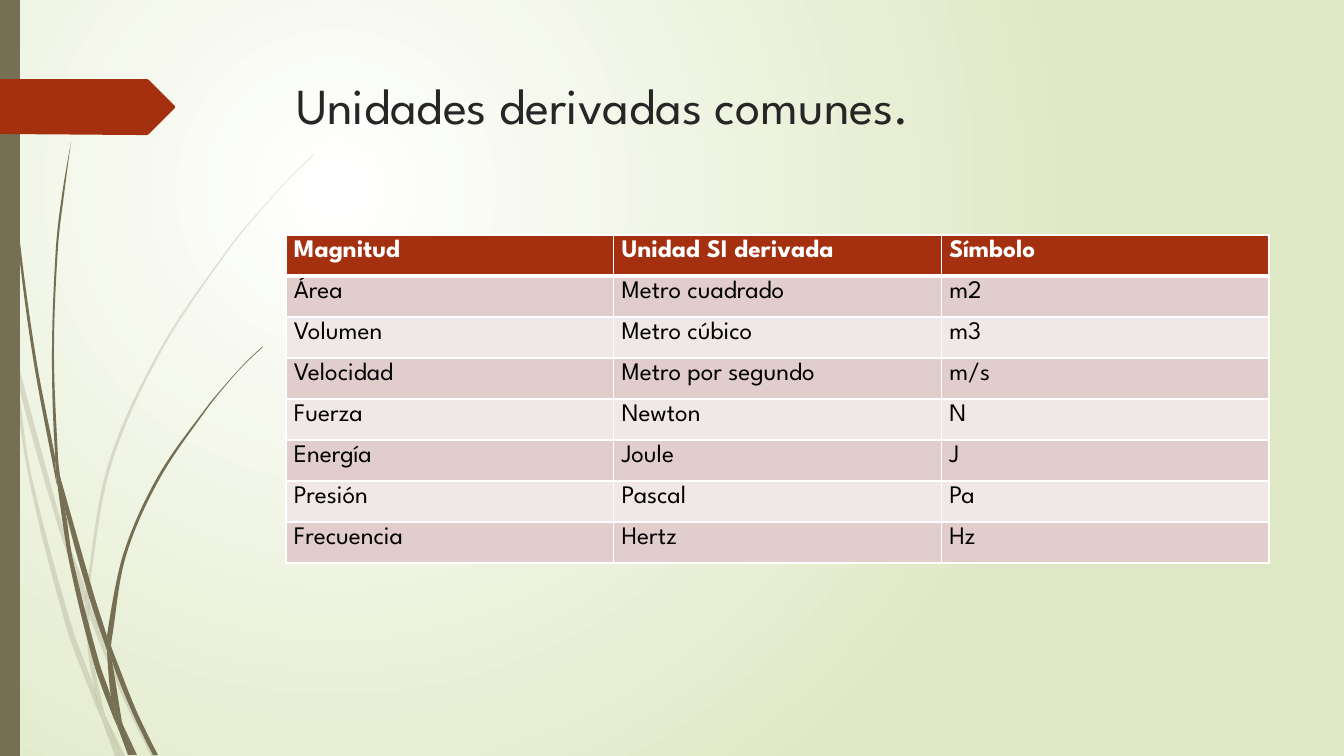
from lxml.etree import SubElement as Sub
from pptx import Presentation
from pptx.dml.color import RGBColor
from pptx.enum.shapes import MSO_SHAPE as Kind
from pptx.enum.text import MSO_ANCHOR as Anchor, MSO_AUTO_SIZE as Fit, PP_ALIGN as Align
from pptx.oxml.ns import qn
from pptx.util import Pt

SCALE = 914400 / 100.8
FONT = "League Spartan"
OLIVE, RUST, WHITE = "766F54", "A53010", "FFFFFF"

# Corner and knot points of the grass pieces
PALE = [
    [(11, 353), (9, 325), (0, 284), (0, 301), (10, 347)],
    [(58, 526), (85, 604), (86, 591), (62, 524), (14, 348), (17, 379)],
    [(93, 612), (89, 601), (89, 615), (124, 700), (151, 756), (156, 756), (128, 698)],
    [(120, 756), (125, 756), (106, 717)],
    [(94, 688), (71, 624), (31, 473), (17, 379), (11, 353), (28, 474), (66, 626),
     (93, 699), (102, 720), (100, 713)],
    [(85, 604), (88, 651), (94, 688), (97, 698), (106, 717), (104, 712), (92, 651),
     (89, 615), (89, 613)],
    [(89, 589), (111, 466), (161, 352), (231, 247), (270, 200), (292, 176), (314, 155),
     (314, 154), (291, 176), (270, 199), (230, 246), (159, 351), (108, 465), (86, 589),
     (86, 591), (89, 601)],
    [(102, 720), (115, 756), (120, 756)],
    [(89, 613), (89, 615), (89, 601), (86, 591), (85, 604)],
    [(97, 698), (94, 688), (100, 713), (102, 720), (120, 756), (106, 717)],
]
DARK = [
    [(7, 111), (17, 235), (33, 358), (56, 481), (57, 485), (55, 461), (55, 457), (36, 358),
     (19, 234), (8, 110), (5, 48), (4, 0), (3, 0), (4, 48)],
    [(89, 597), (107, 650), (107, 638), (107, 636), (94, 595), (60, 476), (65, 509)],
    [(114, 654), (111, 646), (112, 661), (133, 714), (153, 755), (158, 755), (137, 712)],
    [(111, 697), (99, 662), (73, 560), (65, 509), (57, 481), (69, 561), (94, 664),
     (112, 714), (118, 728), (117, 723)],
    [(60, 476), (58, 457), (54, 352), (58, 247), (64, 195), (71, 142), (62, 195),
     (56, 247), (52, 352), (55, 453)],
    [(134, 755), (137, 755), (123, 725)],
    [(57, 481), (65, 509), (60, 476), (55, 453), (55, 457)],
    [(112, 638), (126, 556), (159, 480), (207, 409), (233, 377), (247, 362), (263, 347),
     (262, 347), (247, 361), (233, 376), (206, 408), (157, 478), (123, 555), (107, 636),
     (111, 646)],
    [(118, 728), (128, 755), (132, 755)],
    [(107, 650), (111, 697), (117, 712), (123, 725), (122, 722), (112, 661), (110, 656)],
    [(107, 650), (110, 656), (112, 661), (111, 646), (107, 636), (107, 638)],
    [(117, 712), (111, 697), (117, 723), (118, 728), (131, 755), (134, 755), (123, 725)],
]
TAB = [(175, 108), (149, 134), (147, 135), (137, 135), (0, 134), (0, 79), (147, 79),
       (149, 80), (175, 106)]
ROWS = [
    ("Magnitud", "Unidad SI derivada", "Símbolo"),
    ("Área", "Metro cuadrado", "m2"),
    ("Volumen", "Metro cúbico", "m3"),
    ("Velocidad", "Metro por segundo", "m/s"),
    ("Fuerza", "Newton", "N"),
    ("Energía", "Joule", "J"),
    ("Presión", "Pascal", "Pa"),
    ("Frecuencia", "Hertz", "Hz"),
]


def px(n):
    return round(n * SCALE)


def rgb(code):
    return RGBColor.from_string(code)


def style(para, size, color, bold=False):
    for run in para.runs:
        font = run.font
        font.name, font.size, font.bold = FONT, Pt(size), bold
        font.color.rgb = rgb(color)


def paint(shape, color):
    shape.fill.solid()
    shape.fill.fore_color.rgb = rgb(color)
    shape.line.fill.background()
    shape.shadow.inherit = False


def slope(a, b, c):
    """Unit direction through b, or zero where b is a sharp corner."""
    u, v = b - a, c - b
    if (u * v.conjugate()).real < 0.9 * abs(u) * abs(v):
        return 0
    return (u + v) / abs(u + v)


def bend(shape):
    """Turn the straight sides of an outline into smooth curves."""
    sides = list(shape.element.iter(qn("a:lnTo")))
    ends = [complex(int(side[0].get("x")), int(side[0].get("y"))) for side in sides]
    size = len(ends)
    dirs = [slope(ends[i - 1], ends[i], ends[(i + 1) % size]) for i in range(size)]
    for i, side in enumerate(sides):
        reach = abs(ends[i] - ends[i - 1]) / 3
        grips = ends[i - 1] + dirs[i - 1] * reach, ends[i] - dirs[i] * reach
        side.tag = qn("a:cubicBezTo")
        last = side[0]
        for grip in grips:
            point = Sub(side, qn("a:pt"), x=str(round(grip.real)), y=str(round(grip.imag)))
            last.addprevious(point)


def add_free(slide, points, color):
    ends = [(px(x), px(y)) for x, y in points]
    pen = slide.shapes.build_freeform(*ends[0])
    pen.add_line_segments(ends[1:] + ends[:1], close=True)
    shape = pen.convert_to_shape()
    paint(shape, color)
    return shape


def add_blade(slide, points, alpha=100):
    blade = add_free(slide, points, OLIVE)
    bend(blade)
    if alpha < 100:
        tint = blade.element.spPr.find(qn("a:solidFill"))[0]
        Sub(tint, qn("a:alpha"), val=str(alpha * 1000))


def set_back(slide):
    fill = slide.background.fill
    fill.gradient()
    for stop, color, pos in zip(fill.gradient_stops, (WHITE, "DFE8C4"), (0, 1)):
        stop.color.rgb = rgb(color)
        stop.position = pos
    grad = next(slide.element.iter(qn("a:gradFill")))
    grad.remove(grad.find(qn("a:lin")))
    ring = Sub(grad, qn("a:path"), path="circle")
    Sub(ring, qn("a:fillToRect"), l="50000", t="50000", r="100000", b="100000")


def set_title(slide, text, box):
    title = slide.shapes.title
    title.left, title.top, title.width, title.height = map(px, box)
    frame = title.text_frame
    frame.text = text
    frame.auto_size = Fit.NONE
    frame.vertical_anchor = Anchor.TOP
    frame.paragraphs[0].alignment = Align.LEFT
    style(frame.paragraphs[0], 36, "262626")


def set_edges(cell, top, foot):
    props = cell._tc.get_or_add_tcPr()
    for side, width in zip("LRTB", (1, 1, top, foot)):
        line = Sub(props, qn("a:ln" + side), w=str(Pt(width)))
        Sub(Sub(line, qn("a:solidFill")), qn("a:srgbClr"), val=WHITE)


def fill_cell(cell, text, row):
    head = row == 0
    set_edges(cell, 3 if row == 1 else 1, 3 if head else 1)
    cell.fill.solid()
    cell.fill.fore_color.rgb = rgb(RUST if head else "E1CDCC" if row % 2 else "F0E8E7")
    cell.margin_left = cell.margin_right = px(8)
    cell.margin_top = cell.margin_bottom = px(5)
    cell.text_frame.text = text
    style(cell.text_frame.paragraphs[0], 18, WHITE if head else "000000", head)


def add_grid(slide, rows, box):
    frame = slide.shapes.add_table(len(rows), len(rows[0]), *map(px, box))
    for r, row in enumerate(rows):
        for c, text in enumerate(row):
            fill_cell(frame.table.cell(r, c), text, r)


def main():
    deck = Presentation()
    deck.slide_width, deck.slide_height = px(1344), px(756)
    slide = deck.slides.add_slide(deck.slide_layouts[5])
    set_back(slide)

    # Grass, side bar and arrow tab
    for points in PALE:
        add_blade(slide, points, 20)
    for points in DARK:
        add_blade(slide, points)
    bar = slide.shapes.add_shape(Kind.RECTANGLE, 0, 0, px(20), px(756))
    paint(bar, OLIVE)
    add_free(slide, TAB, RUST)

    # Title and table of units
    set_title(slide, "Unidades derivadas comunes.", (286, 69, 983, 141))
    add_grid(slide, ROWS, (286, 235, 983, 328))
    deck.save("out.pptx")


if __name__ == "__main__":
    main()
